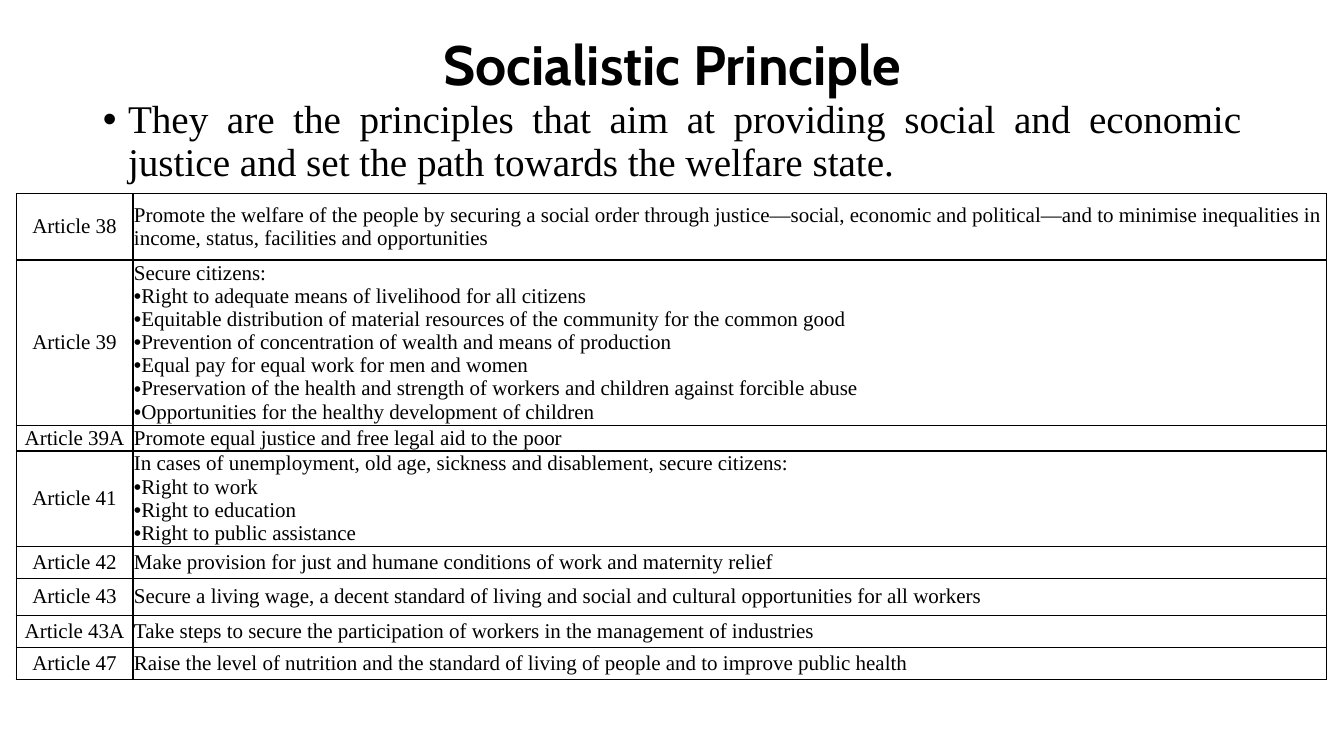
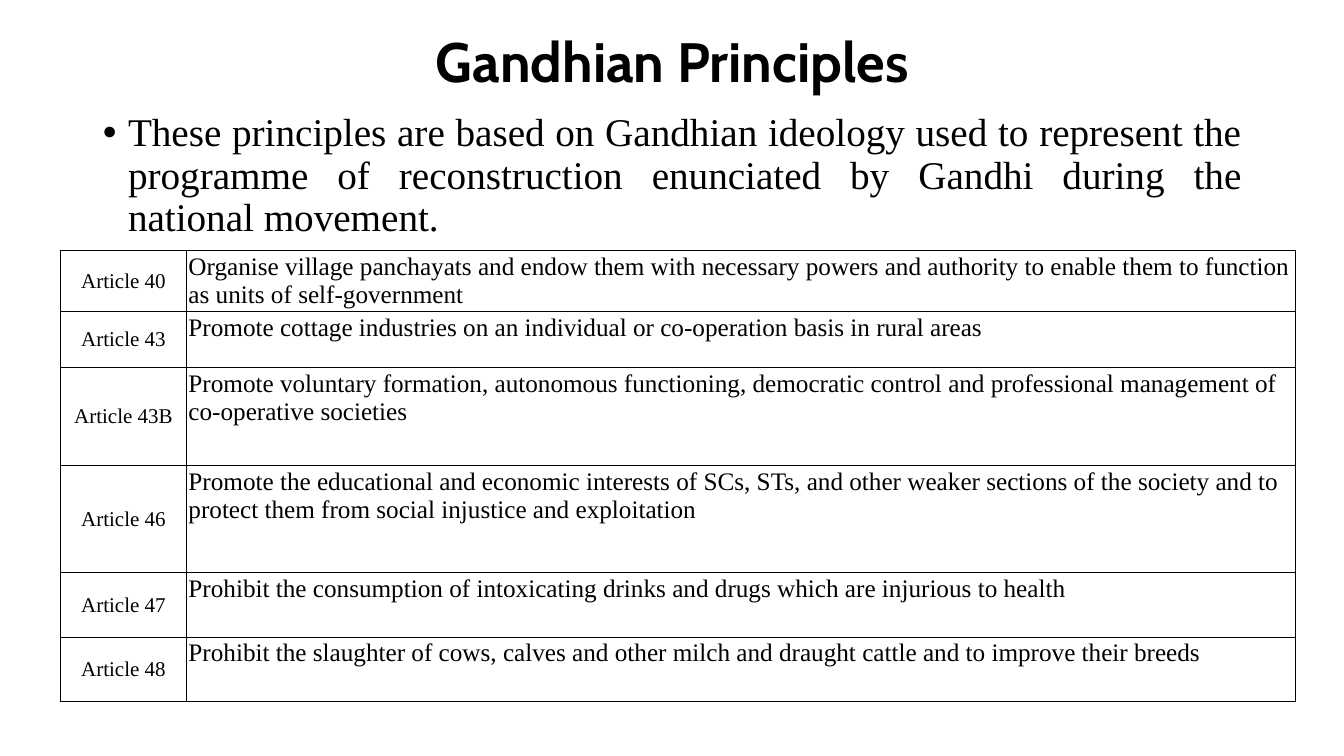
"""Build two slides on the directive principles, each with a lead and a table."""
from lxml import etree
from pptx import Presentation
from pptx.dml.color import RGBColor
from pptx.enum import text as t
from pptx.oxml import ns
from pptx.util import Pt

INK = RGBColor(0, 0, 0)
HEAD, SERIF = "Cabin", "Times New Roman"
LEFT, WIDE = 66.24, 828
MID, TOP = t.MSO_ANCHOR.MIDDLE, t.MSO_ANCHOR.TOP

SLIDES = [
    {
        "title": "Socialistic Principle",
        "lead": "They are the principles that aim at providing social and "
                "economic justice and set the path towards the welfare state.",
        "title_h": 38.9, "lead_y": 67.7, "lead_h": 404.6,
        "at": (11.5, 138.2), "cols": (83.5, 852.5),
        "size": 15, "inset": 0.72, "anchor": MID,
        "rows": [
            (47.5, "Article 38", [
                "Promote the welfare of the people by securing a social order "
                "through justice—social, economic and political—and to "
                "minimise inequalities in income, status, facilities and "
                "opportunities"]),
            (118, "Article 39", [
                "Secure citizens:",
                "Right to adequate means of livelihood for all citizens",
                "Equitable distribution of material resources of the "
                "community for the common good",
                "Prevention of concentration of wealth and means of production",
                "Equal pay for equal work for men and women",
                "Preservation of the health and strength of workers and "
                "children against forcible abuse",
                "Opportunities for the healthy development of children"]),
            (18.5, "Article 39A", [
                "Promote equal justice and free legal aid to the poor"]),
            (68, "Article 41", [
                "In cases of unemployment, old age, sickness and disablement, "
                "secure citizens:",
                "Right to work",
                "Right to education",
                "Right to public assistance"]),
            (23, "Article 42", [
                "Make provision for just and humane conditions of work and "
                "maternity relief"]),
            (26.5, "Article 43", [
                "Secure a living wage, a decent standard of living and social "
                "and cultural opportunities for all workers"]),
            (23, "Article 43A", [
                "Take steps to secure the participation of workers in the "
                "management of industries"]),
            (23, "Article 47", [
                "Raise the level of nutrition and the standard of living of "
                "people and to improve public health"]),
        ],
    },
    {
        "title": "Gandhian Principles",
        "lead": "These principles are based on Gandhian ideology used to "
                "represent the programme of reconstruction enunciated by "
                "Gandhi during the national movement.",
        "title_h": 34.6, "lead_y": 77, "lead_h": 105,
        "at": (43.2, 179.2), "cols": (90, 792),
        "size": 18, "inset": 1.44, "anchor": TOP,
        "rows": [
            (43.5, "Article 40", [
                "Organise village panchayats and endow them with necessary "
                "powers and authority to enable them to function as units of "
                "self-government"]),
            (40, "Article 43", [
                "Promote cottage industries on an individual or co-operation "
                "basis in rural areas"]),
            (70, "Article 43B", [
                "Promote voluntary formation, autonomous functioning, "
                "democratic control and professional management of "
                "co-operative societies"]),
            (76.5, "Article 46", [
                "Promote the educational and economic interests of SCs, STs, "
                "and other weaker sections of the society and to protect them "
                "from social injustice and exploitation"]),
            (46, "Article 47", [
                "Prohibit the consumption of intoxicating drinks and drugs "
                "which are injurious to health"]),
            (46, "Article 48", [
                "Prohibit the slaughter of cows, calves and other milch and "
                "draught cattle and to improve their breeds"]),
        ],
    },
]


def add(node, tag, **attrs):
    return etree.SubElement(node, ns.qn(tag), attrs)


def bullet(para, indent):
    props = para._p.get_or_add_pPr()
    props.set("marL", str(Pt(indent)))
    props.set("indent", str(-Pt(indent)))
    add(props, "a:buFont", typeface="Arial")
    add(props, "a:buChar", char="•")


def write(frame, lines, size, font=SERIF, bold=False, align=t.PP_ALIGN.LEFT,
          space=1.0, first=None, indent=0):
    """Write lines, with bullets from line number `first` on."""
    for i, line in enumerate(lines):
        para = frame.add_paragraph() if i else frame.paragraphs[0]
        if first is not None and i >= first:
            bullet(para, indent)
        para.alignment = align
        para.line_spacing = space
        para.space_before = Pt(0)
        run = para.add_run()
        run.text = line
        run.font.size = Pt(size)
        run.font.name = font
        run.font.bold = bold
        run.font.color.rgb = INK


def place(shape, y, h):
    shape.left, shape.top, shape.width, shape.height = map(
        Pt, (LEFT, y, WIDE, h))
    shape.text_frame.auto_size = t.MSO_AUTO_SIZE.NONE
    return shape.text_frame


def dress(cell, inset, anchor):
    props = cell._tc.get_or_add_tcPr()
    for side in "LRTB":
        line = add(props, f"a:ln{side}", w=str(Pt(1)))
        add(add(line, "a:solidFill"), "a:srgbClr", val=str(INK))
    cell.fill.background()
    cell.margin_left = cell.margin_right = Pt(inset)
    cell.margin_top = cell.margin_bottom = Pt(inset)
    cell.vertical_anchor = anchor
    return cell.text_frame


def grid(slide, data):
    rows, cols = data["rows"], data["cols"]
    high = sum(row[0] for row in rows)
    box = (*data["at"], sum(cols), high)
    table = slide.shapes.add_table(len(rows), 2, *map(Pt, box)).table
    table.first_row = table.horz_banding = False
    for col, width in zip(table.columns, cols):
        col.width = Pt(width)
    for i, (height, name, lines) in enumerate(rows):
        table.rows[i].height = Pt(height)
        write(dress(table.cell(i, 0), data["inset"], MID), [name], 15,
              align=t.PP_ALIGN.CENTER)
        write(dress(table.cell(i, 1), data["inset"], data["anchor"]), lines,
              data["size"], first=1)


def main():
    deck = Presentation()
    deck.slide_width, deck.slide_height = Pt(960), Pt(540)
    for data in SLIDES:
        slide = deck.slides.add_slide(deck.slide_layouts[1])
        head, body = slide.placeholders
        frame = place(head, 28.8, data["title_h"])
        frame.vertical_anchor = MID
        write(frame, [data["title"]], 39.6, font=HEAD, bold=True,
              align=t.PP_ALIGN.CENTER, space=0.9)
        write(place(body, data["lead_y"], data["lead_h"]), [data["lead"]], 28,
              align=t.PP_ALIGN.JUSTIFY, space=0.9, first=0, indent=18)
        grid(slide, data)
    deck.save("out.pptx")


if __name__ == "__main__":
    main()
